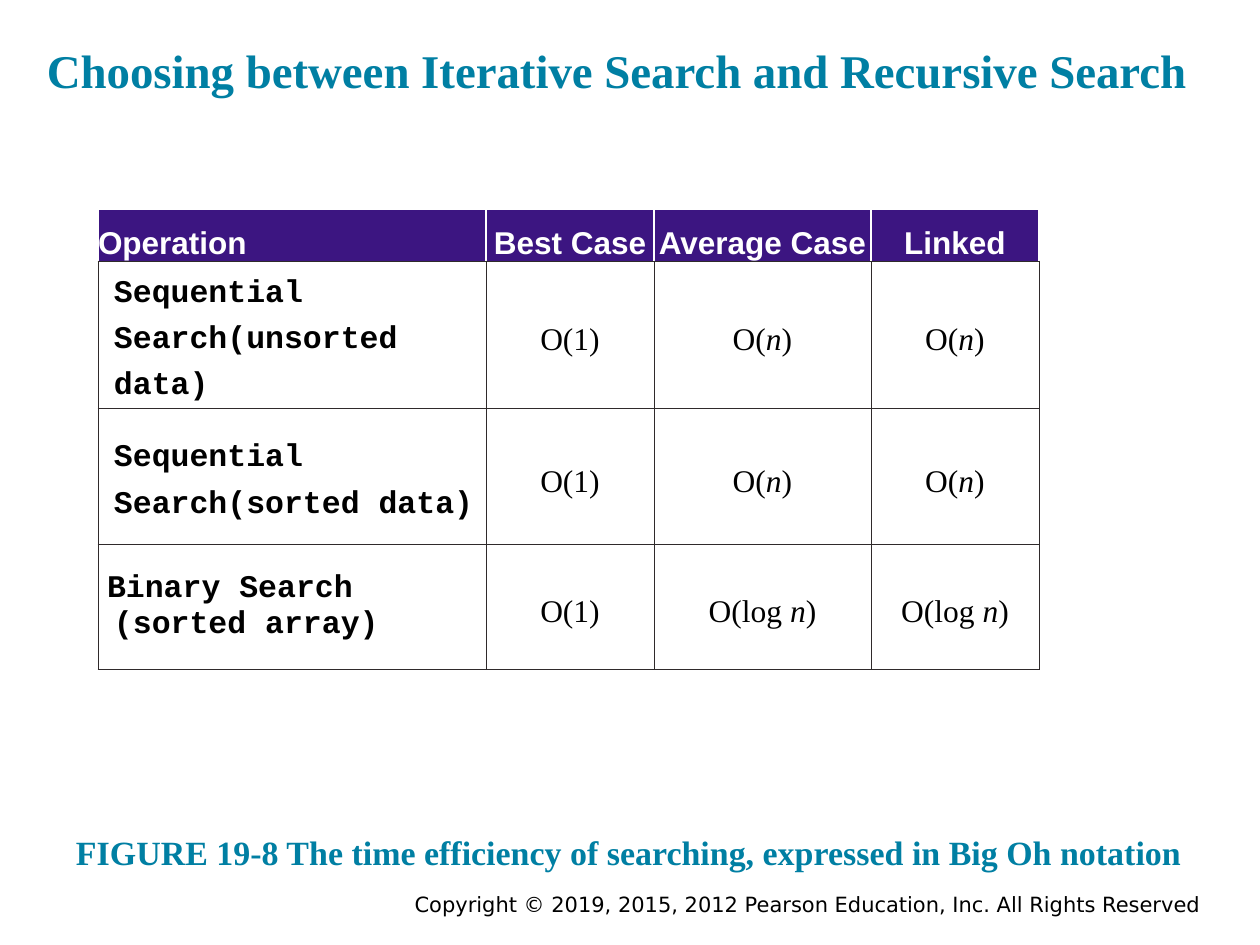
from lxml.etree import SubElement
from pptx import Presentation
from pptx.dml.color import RGBColor
from pptx.enum.text import MSO_ANCHOR as Anchor, PP_ALIGN as Align
from pptx.oxml.ns import qn
from pptx.util import Emu, Pt

SCALE = 914400 / 126
COLORS = {"teal": "007FA3", "purple": "3C1581", "rule": "2F2A2B",
          "white": "FFFFFF", "black": "000000"}
SERIF, SANS, MONO = "Times New Roman", "Arial", "Courier New"

HEADINGS = ["Operation", "Best Case", "Average Case", "Linked"]
SEARCHES = [
    (["Sequential Search(unsorted data)"], "O(1)", "O(n)", "O(n)"),
    (["Sequential Search(sorted data)"], "O(1)", "O(n)", "O(n)"),
    (["Binary Search", "(sorted array)"], "O(1)", "O(log n)", "O(log n)"),
]
COLUMN_WIDTHS = [388, 168, 217, 168]
ROW_HEIGHTS = [52, 136, 136, 125]


def px(length):
    return Emu(round(length * SCALE))


def set_font(para, name, size, color, bold=False):
    font = para.font
    font.name, font.size, font.bold = name, Pt(size), bold
    font.color.rgb = RGBColor.from_string(COLORS[color])


def set_margins(target, side, top):
    target.margin_left = target.margin_right = px(side)
    target.margin_top = target.margin_bottom = px(top)


def add_text(page, box, text, name, size, color, bold=False,
             align=Align.LEFT, anchor=Anchor.BOTTOM, margin=13):
    frame = page.shapes.add_textbox(*map(px, box)).text_frame
    frame.word_wrap = True
    frame.vertical_anchor = anchor
    set_margins(frame, margin, margin)
    para = frame.paragraphs[0]
    para.alignment = align
    para.add_run().text = text
    set_font(para, name, size, color, bold)


def style_cell(cell, fill, borders):
    """Borders are (colour, points) for left, right, top and bottom."""
    props = cell._tc.get_or_add_tcPr()
    for side, (color, points) in zip("LRTB", borders):
        line = SubElement(props, qn(f"a:ln{side}"), w=str(Pt(points)))
        solid = SubElement(line, qn("a:solidFill"))
        SubElement(solid, qn("a:srgbClr"), val=COLORS[color])
    cell.fill.solid()
    cell.fill.fore_color.rgb = RGBColor.from_string(COLORS[fill])


def fill_heading(cell, text, align):
    style_cell(cell, "purple", [("white", 1)] * 3 + [("rule", 0.5)])
    set_margins(cell, 0, 0)
    cell.vertical_anchor = Anchor.BOTTOM
    para = cell.text_frame.paragraphs[0]
    para.alignment = align
    para.add_run().text = text
    set_font(para, SANS, 18, "white", bold=True)


def start_body(cell):
    style_cell(cell, "white", [("rule", 0.5)] * 4)
    set_margins(cell, 9, 0)
    cell.vertical_anchor = Anchor.MIDDLE
    para = cell.text_frame.paragraphs[0]
    para.space_before = Pt(2)
    return para


def fill_operation(cell, lines):
    para = start_body(cell)
    props = para._p.get_or_add_pPr()
    props.set("marL", str(px(7)))
    if len(lines) > 1:
        props.set("indent", str(-px(7)))
    else:
        para.line_spacing = 1.3
    for index, line in enumerate(lines):
        if index:
            para.add_line_break()
        para.add_run().text = line
    set_font(para, MONO, 18, "black", bold=True)


def fill_order(cell, formula):
    para = start_body(cell)
    para.alignment = Align.CENTER
    para.line_spacing = 1.3
    for part in filter(None, formula.partition("n")):
        span = para.add_run()
        span.text = part
        if part == "n":
            span.font.italic = True
    set_font(para, SERIF, 18, "black")


def add_efficiency_table(page, left, top):
    table = page.shapes.add_table(
        len(ROW_HEIGHTS), len(COLUMN_WIDTHS), px(left), px(top),
        px(sum(COLUMN_WIDTHS)), px(sum(ROW_HEIGHTS))).table
    table.horz_banding = False
    for column, width in zip(table.columns, COLUMN_WIDTHS):
        column.width = px(width)
    for row, height in zip(table.rows, ROW_HEIGHTS):
        row.height = px(height)

    # Heading row
    for index, heading in enumerate(HEADINGS):
        fill_heading(table.cell(0, index), heading,
                     Align.CENTER if index else Align.LEFT)

    # One row for each search
    for row, (operation, *orders) in enumerate(SEARCHES, 1):
        fill_operation(table.cell(row, 0), operation)
        for column, formula in enumerate(orders, 1):
            fill_order(table.cell(row, column), formula)


def build_page(deck):
    page = deck.slides.add_slide(deck.slide_layouts[6])
    # Footer
    add_text(page, (220, 886, 987, 39),
             "Copyright © 2019, 2015, 2012 Pearson Education, Inc. All Rights Reserved",
             "DejaVu Sans", 12, "black", align=Align.RIGHT,
             anchor=Anchor.TOP, margin=6)
    # Title
    add_text(page, (34, 0, 1173, 111),
             "Choosing between Iterative Search and Recursive Search",
             SERIF, 26.8, "teal", bold=True)
    # Caption
    add_text(page, (63, 789, 1134, 96),
             "FIGURE 19-8 The time efficiency of searching, expressed in Big Oh notation",
             SERIF, 19.4, "teal", bold=True)
    # Table
    add_efficiency_table(page, 98, 209)


def main():
    deck = Presentation()
    deck.slide_width, deck.slide_height = px(1260), px(945)
    build_page(deck)
    deck.save("out.pptx")


if __name__ == "__main__":
    main()
